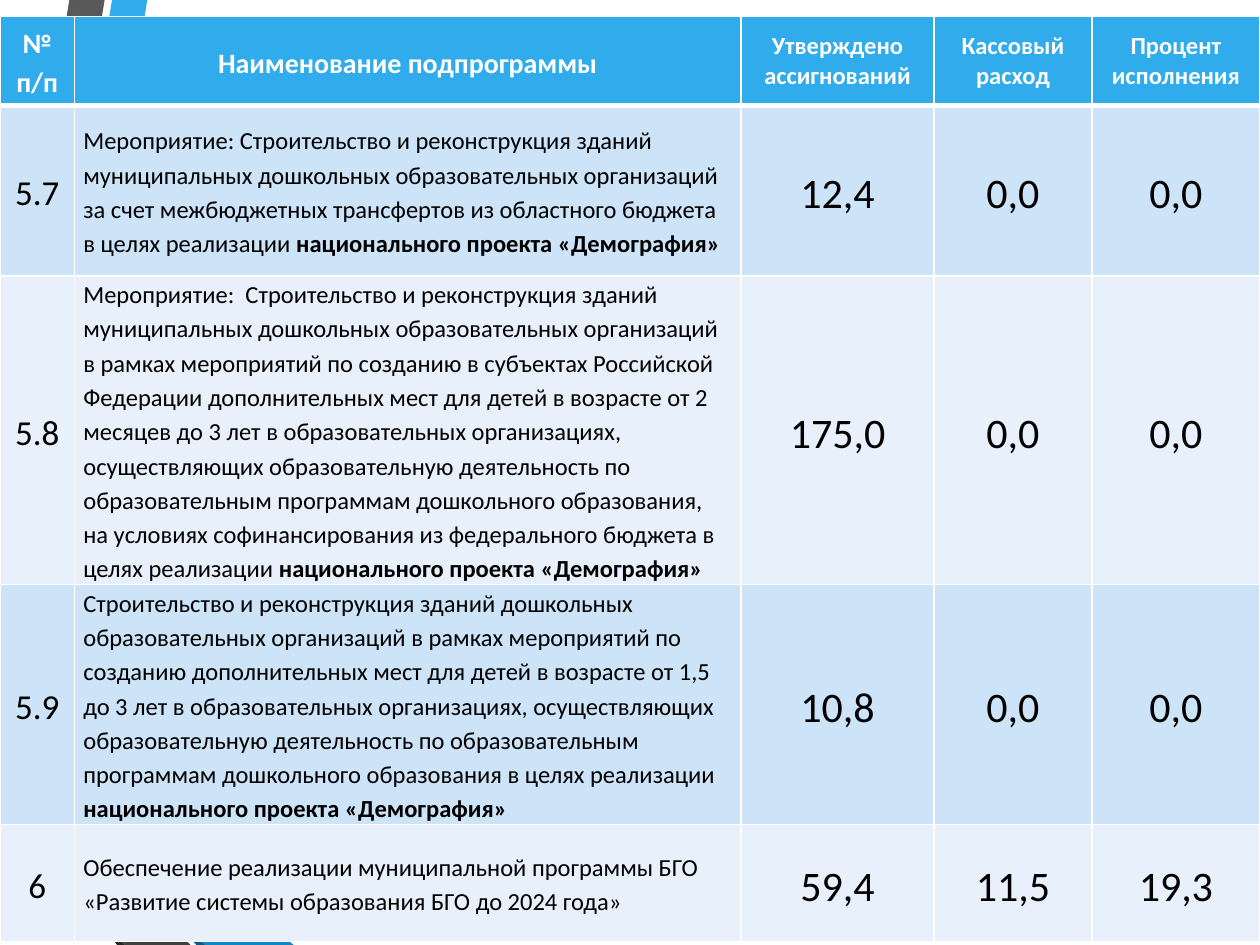
from dataclasses import dataclass

from lxml.etree import SubElement
from pptx import Presentation
from pptx.dml.color import RGBColor as Color
from pptx.enum.text import MSO_VERTICAL_ANCHOR as Anchor, PP_PARAGRAPH_ALIGNMENT as Align
from pptx.oxml.ns import qn
from pptx.slide import Slide
from pptx.table import _Cell as Cell
from pptx.util import Cm, Pt


@dataclass(frozen=True)
class Theme:
    font: str = "Calibri"
    accent: str = "30ACEC"
    white: str = "FFFFFF"
    black: str = "000000"
    bands: tuple[str, str] = ("CDE3F8", "E8F1FB")
    text_size: int = 14
    header_size: int = 16
    number_size: int = 20
    value_size: int = 24
    thin_line: int = 1
    thick_line: int = 3
    line_spacing: float = 1.15


@dataclass(frozen=True)
class Ribbon:
    color: str
    points: tuple[tuple[float, float], ...]


@dataclass(frozen=True)
class Programme:
    number: str
    name: str
    project: str
    values: tuple[str, str, str]
    height: float


@dataclass(frozen=True)
class CellStyle:
    fill: str
    color: str
    size: int
    bold: bool = False
    align: Align = Align.CENTER
    spacing: float = 1.0
    top: int = 1
    bottom: int = 1


THEME = Theme()
PROJECT = "национального проекта «Демография»"
COLUMN_WIDTHS = (1.5, 13.44, 3.89, 3.18, 3.39)
HEADER_HEIGHT = 1.8
HEADERS = (
    "№ п/п",
    "Наименование подпрограммы",
    "Утверждено ассигнований",
    "Кассовый расход",
    "Процент исполнения",
)
RIBBONS = (
    Ribbon(THEME.accent, ((0, 13.82), (0, 14.6), (0.56, 14.71), (2.97, 0), (2.26, 0))),
    Ribbon("595959", ((2.11, 0), (1.4, 0), (0, 8.53), (0, 12.85))),
    Ribbon("262626", ((0, 15.72), (0, 15.77), (2.36, 19.05), (2.51, 19.05))),
    Ribbon("0C5A82", ((0, 14.71), (0, 14.73), (3.96, 19.05), (4.14, 19.05))),
    Ribbon("1287C3", ((0, 14.71), (4.14, 19.05), (5.92, 19.05), (0.56, 14.71), (0, 14.6))),
    Ribbon("404040", ((0, 15.72), (2.51, 19.05), (3.84, 19.05), (0, 14.88))),
)
PROGRAMMES = (
    Programme(
        "5.7",
        "Мероприятие: Строительство и реконструкция зданий муниципальных дошкольных "
        "образовательных организаций за счет межбюджетных трансфертов из областного "
        "бюджета в целях реализации ",
        PROJECT, ("12,4", "0,0", "0,0"), 3.43,
    ),
    Programme(
        "5.8",
        "Мероприятие:  Строительство и реконструкция зданий муниципальных дошкольных "
        "образовательных организаций в рамках мероприятий по созданию в субъектах "
        "Российской Федерации дополнительных мест для детей в возрасте от 2 месяцев до "
        "3 лет в образовательных организациях, осуществляющих образовательную "
        "деятельность по образовательным программам дошкольного образования, на условиях "
        "софинансирования из федерального бюджета в целях реализации ",
        PROJECT, ("175,0", "0,0", "0,0"), 6.22,
    ),
    Programme(
        "5.9",
        "Строительство и реконструкция зданий дошкольных образовательных организаций в "
        "рамках мероприятий по созданию дополнительных мест для детей в возрасте от 1,5 "
        "до 3 лет в образовательных организациях, осуществляющих образовательную "
        "деятельность по образовательным программам дошкольного образования в целях "
        "реализации ",
        PROJECT, ("10,8", "0,0", "0,0"), 4.84,
    ),
    Programme(
        "6",
        "Обеспечение реализации муниципальной программы БГО «Развитие системы "
        "образования БГО до 2024 года»",
        "", ("59,4", "11,5", "19,3"), 2.36,
    ),
)


def draw_ribbon(slide: Slide, ribbon: Ribbon) -> None:
    start, *rest = [(Cm(x), Cm(y)) for x, y in ribbon.points]
    builder = slide.shapes.build_freeform(*start)
    builder.add_line_segments(rest, close=True)
    shape = builder.convert_to_shape()
    shape.shadow.inherit = False
    shape.fill.solid()
    shape.fill.fore_color.rgb = Color.from_string(ribbon.color)
    shape.line.fill.background()


def set_borders(cell: Cell, top: int, bottom: int) -> None:
    properties = cell._tc.get_or_add_tcPr()
    widths = {"lnL": THEME.thin_line, "lnR": THEME.thin_line, "lnT": top, "lnB": bottom}
    for tag, width in widths.items():
        line = SubElement(properties, qn(f"a:{tag}"), w=str(Pt(width)))
        fill = SubElement(line, qn("a:solidFill"))
        SubElement(fill, qn("a:srgbClr"), val=THEME.white)


def fill_cell(cell: Cell, text: str, style: CellStyle, emphasis: str = "") -> None:
    set_borders(cell, style.top, style.bottom)
    cell.fill.solid()
    cell.fill.fore_color.rgb = Color.from_string(style.fill)
    cell.vertical_anchor = Anchor.MIDDLE
    cell.margin_left = cell.margin_right = Cm(0.18)
    cell.margin_top = cell.margin_bottom = Cm(0)
    paragraph = cell.text_frame.paragraphs[0]
    paragraph.text = text
    paragraph.alignment = style.align
    paragraph.line_spacing = style.spacing
    if emphasis:
        paragraph.add_run().text = emphasis
    for index, run in enumerate(paragraph.runs):
        run.font.name = THEME.font
        run.font.size = Pt(style.size)
        run.font.bold = style.bold or index > 0
        run.font.color.rgb = Color.from_string(style.color)


def draw_table(slide: Slide) -> None:
    heights = (HEADER_HEIGHT, *(programme.height for programme in PROGRAMMES))
    table = slide.shapes.add_table(
        len(heights), len(COLUMN_WIDTHS), Cm(0), Cm(0.33), Cm(sum(COLUMN_WIDTHS)), Cm(sum(heights))
    ).table
    table.horz_banding = False
    for column, width in zip(table.columns, COLUMN_WIDTHS):
        column.width = Cm(width)
    for row, height in zip(table.rows, heights):
        row.height = Cm(height)
    for index, header in enumerate(HEADERS):
        wide = index < 2
        style = CellStyle(
            THEME.accent, THEME.white, THEME.header_size if wide else THEME.text_size, bold=True,
            spacing=THEME.line_spacing if wide else 1.0, bottom=THEME.thick_line,
        )
        fill_cell(table.cell(0, index), header, style)
    for index, programme in enumerate(PROGRAMMES):
        draw_programme(list(table.rows[index + 1].cells), programme, index)


def draw_programme(cells: list[Cell], programme: Programme, index: int) -> None:
    def style(size: int, align: Align = Align.CENTER) -> CellStyle:
        return CellStyle(
            THEME.bands[index % 2], THEME.black, size, align=align, spacing=THEME.line_spacing,
            top=THEME.thin_line if index else THEME.thick_line,
        )

    fill_cell(cells[0], programme.number, style(THEME.number_size))
    fill_cell(cells[1], programme.name, style(THEME.text_size, Align.LEFT), programme.project)
    for cell, value in zip(cells[2:], programme.values):
        fill_cell(cell, value, style(THEME.value_size))


def main() -> None:
    """Build the slide with the table of subprogramme spending."""
    presentation = Presentation()
    presentation.slide_width, presentation.slide_height = Cm(25.4), Cm(19.05)
    slide = presentation.slides.add_slide(presentation.slide_layouts[6])
    for ribbon in RIBBONS:
        draw_ribbon(slide, ribbon)
    draw_table(slide)
    presentation.save("out.pptx")


if __name__ == "__main__":
    main()
